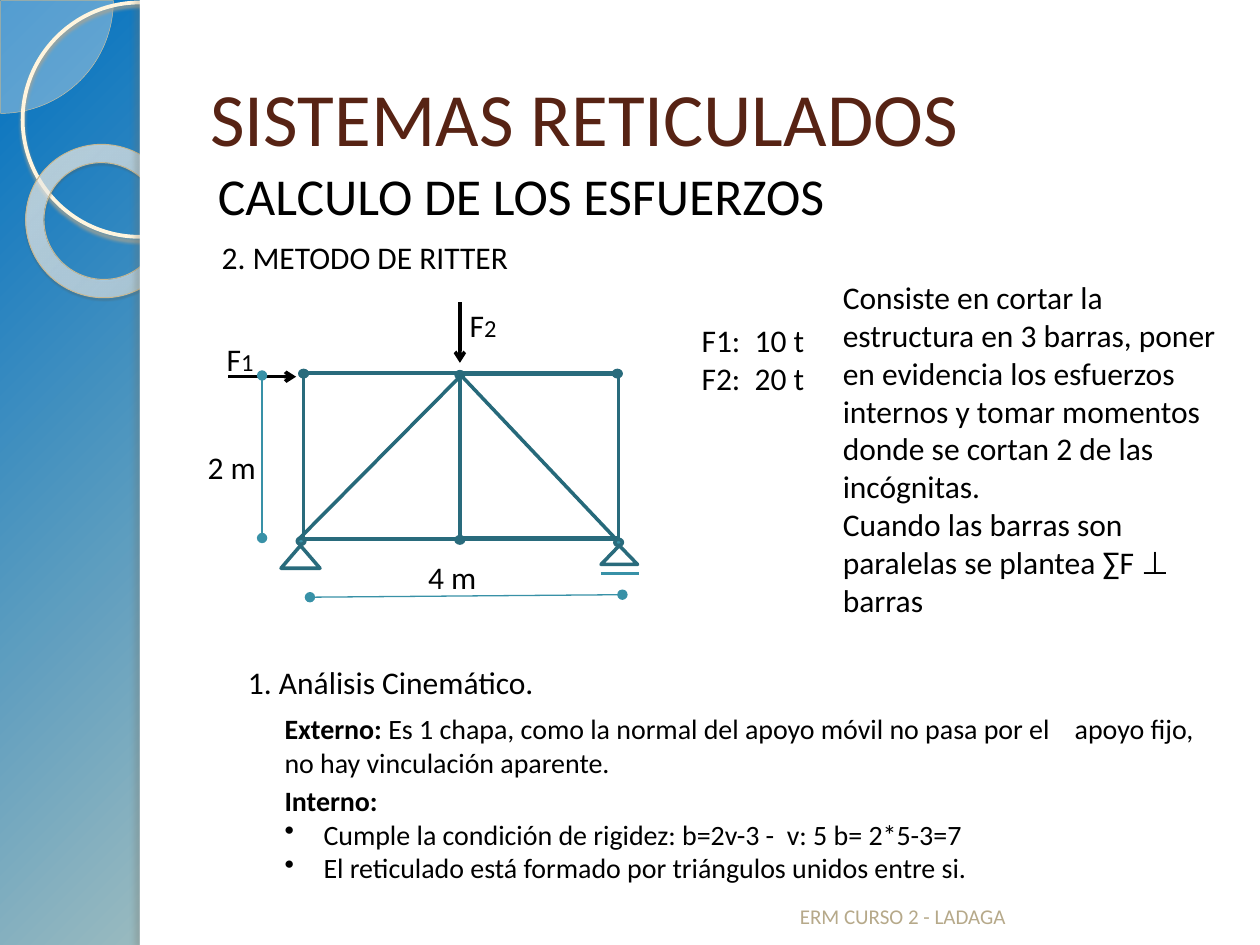
from dataclasses import dataclass

from lxml.etree import SubElement
from pptx import Presentation
from pptx.dml.color import RGBColor
from pptx.enum.shapes import MSO_CONNECTOR, MSO_SHAPE
from pptx.enum.text import MSO_ANCHOR, MSO_AUTO_SIZE, PP_ALIGN
from pptx.oxml.ns import qn
from pptx.util import Inches, Pt

FONT = "Calibri"
BLACK = RGBColor(0x00, 0x00, 0x00)
WHITE = RGBColor(0xFF, 0xFF, 0xFF)
BROWN = RGBColor(0x57, 0x23, 0x14)
FOOTER = RGBColor(0xB6, 0xA9, 0x8A)
TEAL = RGBColor(0x38, 0x91, 0xA7)
BAR = RGBColor(0x29, 0x6B, 0x7C)
DIAGONAL = RGBColor(0x26, 0x69, 0x7A)
CREAM = RGBColor(0xFE, 0xFA, 0xF4)
RING = RGBColor(0xFF, 0xF5, 0xDE)
PIE_EDGE = RGBColor(0xD3, 0xC3, 0x9F)
DONUT_EDGE = RGBColor(0xC7, 0xB8, 0x93)
RING_SHADOW = RGBColor(0xB0, 0xA6, 0x8F)
DONUT_SHADOW = RGBColor(0x5A, 0x54, 0x44)
PANEL_SHADOW = RGBColor(0x73, 0x6F, 0x63)


@dataclass
class Run:
    text: str
    size: float = 18
    bold: bool = False
    color: RGBColor = BLACK


@dataclass
class Para:
    runs: list[Run]
    indent: float = 0
    before: float = 0
    line_spacing: float = 1
    bullet: bool = False


@dataclass
class TextBox:
    at: tuple[float, float, float, float]
    paras: list[Para]
    anchor: MSO_ANCHOR = MSO_ANCHOR.TOP


@dataclass
class Line:
    start: tuple[float, float]
    end: tuple[float, float]
    color: RGBColor
    width: float
    head: str = ""
    tail: str = ""


def add_color(parent, color, opacity=100):
    clr = SubElement(parent, qn("a:srgbClr"), val=str(color))
    if opacity < 100:
        SubElement(clr, qn("a:alpha"), val=str(opacity * 1000))


def set_radial(owner, stops, focus):
    """Turn the gradient in owner into a circular one; stops are (position, colour, opacity)."""
    grad = owner.find(".//" + qn("a:gradFill"))
    grad.clear()
    gs_list = SubElement(grad, qn("a:gsLst"))
    for pos, color, opacity in stops:
        gs = SubElement(gs_list, qn("a:gs"), pos=str(pos * 1000))
        add_color(gs, RGBColor.from_string(color), opacity)
    circle = SubElement(grad, qn("a:path"), {"path": "circle"})
    SubElement(circle, qn("a:fillToRect"),
               {side: str(v * 1000) for side, v in zip("ltrb", focus)})


def set_shadow(sp, color, opacity, blur, dist, angle):
    effects = sp._element.spPr.find(qn("a:effectLst"))
    shadow = SubElement(effects, qn("a:outerShdw"), blurRad=str(Pt(blur)),
                        dist=str(Pt(dist)), dir=str(angle * 60000),
                        algn="tl", rotWithShape="0")
    add_color(shadow, color, opacity)


def add_shape(shapes, kind, at, fill=None, line=None, width=2.0):
    sp = shapes.add_shape(kind, *map(Inches, at))
    sp.shadow.inherit = False
    if fill is None:
        sp.fill.background()
    else:
        sp.fill.solid()
        sp.fill.fore_color.rgb = fill
    if line is None:
        sp.line.fill.background()
    else:
        sp.line.color.rgb = line
        sp.line.width = Pt(width)
    return sp


def add_line(shapes, line: Line):
    cxn = shapes.add_connector(MSO_CONNECTOR.STRAIGHT, *map(Inches, line.start + line.end))
    cxn.line.color.rgb = line.color
    cxn.line.width = Pt(line.width)
    ln = cxn.line._get_or_add_ln()
    for tag, kind in (("a:headEnd", line.head), ("a:tailEnd", line.tail)):
        if kind:
            SubElement(ln, qn(tag), type=kind)
    SubElement(cxn._element.spPr, qn("a:effectLst"))


def fill_text(tf, paras: list[Para]):
    tf.word_wrap = True
    for i, para in enumerate(paras):
        p = tf.add_paragraph() if i else tf.paragraphs[0]
        p.alignment = PP_ALIGN.LEFT
        p.space_before = Pt(para.before)
        p.line_spacing = para.line_spacing
        pPr = p._p.get_or_add_pPr()
        pPr.set("marL", str(Inches(para.indent)))
        if para.bullet:
            pPr.set("indent", str(-Inches(para.indent)))
            SubElement(pPr, qn("a:buChar"), char="•")
        for run in para.runs:
            r = p.add_run()
            r.text = run.text
            r.font.name, r.font.size, r.font.bold = FONT, Pt(run.size), run.bold
            r.font.color.rgb = run.color


def add_text(shapes, box: TextBox):
    tf = shapes.add_textbox(*map(Inches, box.at)).text_frame
    tf.vertical_anchor = box.anchor
    fill_text(tf, box.paras)


def draw_backdrop(s):
    s.background.fill.gradient()
    set_radial(s.element, [(0, "0070C0", 100), (82, "FFEBBE", 100), (100, "C9B484", 100)],
               (-24, -20, 124, 120))
    pie = add_shape(s.shapes, MSO_SHAPE.PIE, (-0.89, -0.89, 1.79, 1.79), CREAM, PIE_EDGE, 0.25)
    pie.adjustments[1] = 54
    SubElement(pie._element.spPr.find(qn("a:solidFill"))[0], qn("a:alpha"), val="33000")
    ring = add_shape(s.shapes, MSO_SHAPE.OVAL, (0.18, 0.02, 1.86, 1.86), None, RING, 2.15)
    set_shadow(ring, RING_SHADOW, 85, 2, 2, 90)
    donut = add_shape(s.shapes, MSO_SHAPE.DONUT, (0.2, 1.15, 1.23, 1.21), None, DONUT_EDGE, 0.58)
    donut.adjustments[0] = 0.12
    donut.rotation = 38.6
    donut.fill.gradient()
    set_radial(donut._element, [(0, "FFFCF6", 70), (70, "FFFEFB", 55), (100, "F0D28E", 60)],
               (-408, -50, 508, 150))
    set_shadow(donut, DONUT_SHADOW, 35, 1, 1.2, 75)
    add_shape(s.shapes, MSO_SHAPE.RECTANGLE, (1.11, 0, 8.89, 7.5), WHITE)
    edge = add_shape(s.shapes, MSO_SHAPE.RECTANGLE, (1.11, 0, 0.08, 7.5), WHITE)
    set_shadow(edge, PANEL_SHADOW, 25, 3, 3, 180)


def draw_truss(s):
    truss = s.shapes.add_group_shape().shapes
    add_line(truss, Line((4.77, 4.55), (5.07, 4.55), TEAL, 1.5))
    for x, y in JOINTS:
        add_shape(truss, MSO_SHAPE.OVAL, (x, y, 0.06, 0.05), TEAL, BAR)
    for at in SUPPORTS:
        add_shape(truss, MSO_SHAPE.ISOSCELES_TRIANGLE, at, WHITE, BAR)
    for at in FRAMES:
        add_shape(truss, MSO_SHAPE.RECTANGLE, at, None, BAR)
    for foot in (2.37, 4.89):
        add_line(truss, Line((foot, 4.28), (3.66, 2.98), DIAGONAL, 2))


JOINTS = [(2.38, 2.94), (3.62, 2.95), (4.87, 2.94), (2.36, 4.27), (3.62, 4.26), (4.88, 4.28)]
SUPPORTS = [(2.23, 4.33, 0.31, 0.18), (4.77, 4.33, 0.29, 0.15)]
FRAMES = [(3.65, 2.97, 1.26, 1.3), (2.41, 2.96, 2.5, 1.32)]
FORCES_AND_DIMENSIONS = [
    Line((1.81, 2.99), (2.35, 2.99), BLACK, 2, tail="arrow"),
    Line((3.65, 2.4), (3.65, 2.88), BLACK, 2, tail="arrow"),
    Line((2.46, 4.74), (4.94, 4.72), TEAL, 0.75, "oval", "oval"),
    Line((2.08, 4.27), (2.08, 2.98), TEAL, 0.75, "oval", "oval"),
]
TEXTS = [
    TextBox((1.22, 1.84, 5.22, 0.54), [Para([Run("2. METODO DE RITTER")], 0.44, 5.5)]),
    TextBox((1.54, 1.31, 8.2, 0.55), [Para([Run("CALCULO DE LOS ESFUERZOS", 29.6)], 0.09, 6, 0.9)]),
    TextBox((6.25, 6.9, 3.17, 0.52), [Para([Run("ERM CURSO 2 - LADAGA", 12, color=FOOTER)])],
            MSO_ANCHOR.BOTTOM),
    TextBox((1.7, 2.65, 0.54, 0.4), [Para([Run("F"), Run("1", 14)])]),
    TextBox((3.63, 2.38, 0.54, 0.4), [Para([Run("F"), Run("2", 14)])]),
    TextBox((5.47, 2.5, 1.5, 0.71), [Para([Run("F1:  10 t")]), Para([Run("F2:  20 t")])]),
    TextBox((3.3, 4.38, 0.86, 0.4), [Para([Run("4 m")])]),
    TextBox((1.55, 3.51, 0.86, 0.4), [Para([Run("2 m")])]),
    TextBox((1.87, 5.21, 7.77, 0.4), [Para([Run("1. Análisis Cinemático.")])]),
    TextBox((2.16, 5.6, 7.49, 0.64), [Para([
        Run("Externo: ", 16, True),
        Run("Es 1 chapa, como la normal del apoyo móvil no pasa por el    apoyo fijo, "
            "no hay vinculación aparente.", 16)])]),
    TextBox((2.16, 6.17, 6.81, 1.18), [
        Para([Run("Interno:", 16, True)]),
        Para([Run("Cumple la condición de rigidez: b=2v-3 -  v: 5 b= 2*5-3=7", 16)], 0.31, bullet=True),
        Para([Run("El reticulado está formado por triángulos unidos entre si.", 16)], 0.31, bullet=True)]),
    TextBox((6.59, 2.16, 3.31, 2.83), [
        Para([Run("Consiste en cortar la estructura en 3 barras, poner en evidencia los esfuerzos "
                  "internos y tomar momentos donde se cortan 2 de las incógnitas.")]),
        Para([Run("Cuando las barras son paralelas se plantea ∑F ⊥ barras")])]),
]

prs = Presentation()
prs.slide_width, prs.slide_height = Inches(10), Inches(7.5)
s = prs.slides.add_slide(prs.slide_layouts[5])
draw_backdrop(s)

title = s.shapes.title
s.shapes._spTree.append(title._element)  # bring the title in front of the white panel
title.left, title.top, title.width, title.height = map(Inches, (1.57, 0.3, 8.2, 1.25))
title.text_frame.auto_size = MSO_AUTO_SIZE.NONE
title.text_frame.vertical_anchor = MSO_ANCHOR.MIDDLE
fill_text(title.text_frame, [Para([Run("SISTEMAS RETICULADOS", 43, color=BROWN)])])

for line in FORCES_AND_DIMENSIONS:
    add_line(s.shapes, line)
draw_truss(s)
for box in TEXTS:
    add_text(s.shapes, box)
prs.save("out.pptx")
